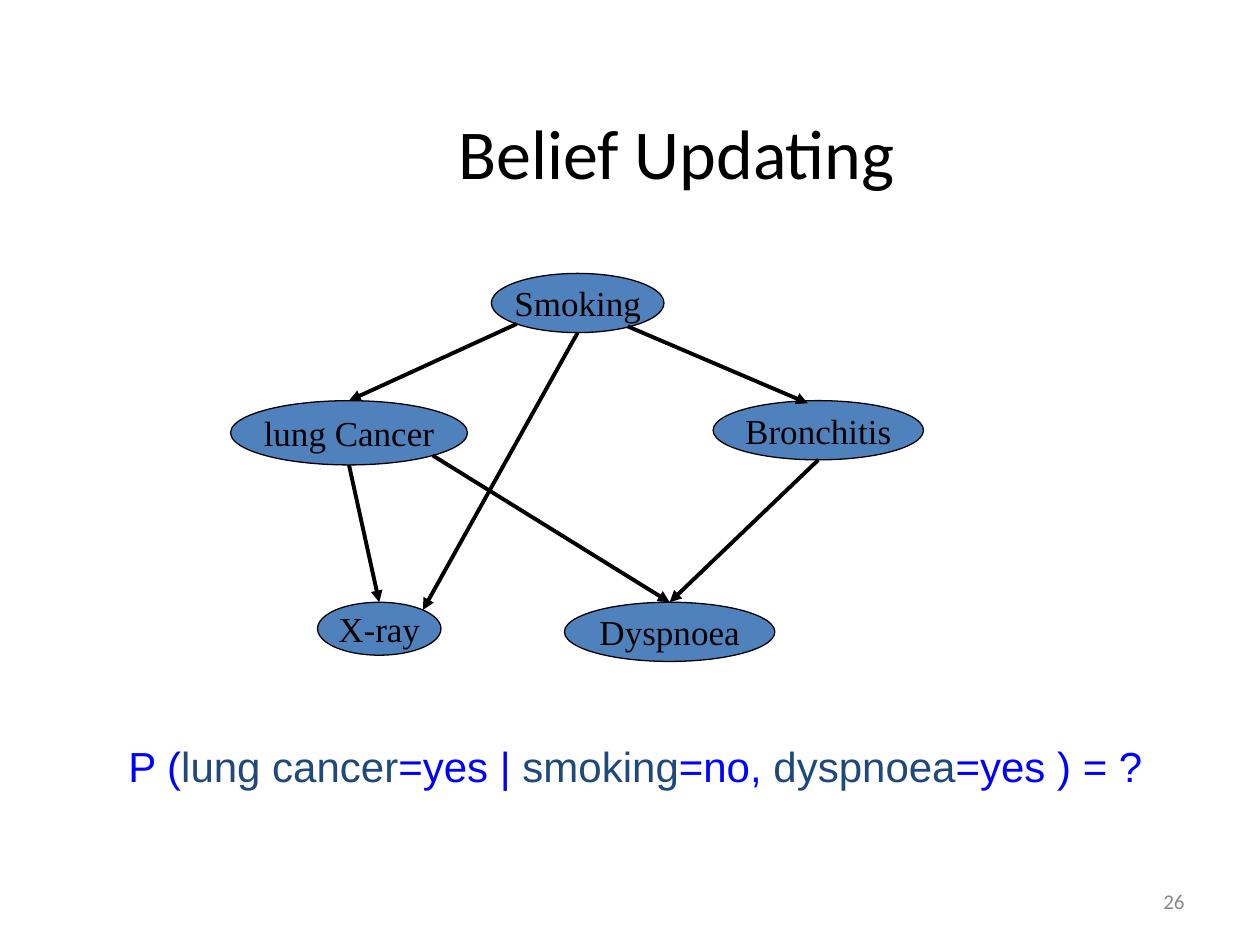
import math

import pptx
import pptx.dml.color
import pptx.enum.shapes
import pptx.enum.text
import pptx.oxml
import pptx.oxml.ns
import pptx.util

Inches = pptx.util.Inches
Pt = pptx.util.Pt
Align = pptx.enum.text.PP_ALIGN
Anchor = pptx.enum.text.MSO_ANCHOR

COLORS = {
    "black": "000000",
    "gray": "898989",
    "node": "4F81BD",
    "blue": "0000FF",
    "navy": "1F497D",
}

# Spots on an oval, as shares of its half width and half height
DIAG = math.sqrt(0.5)
TOP, BOTTOM = (0, -1), (0, 1)
LOW_LEFT, LOW_RIGHT = (-DIAG, DIAG), (DIAG, DIAG)
UP_RIGHT = (DIAG, -DIAG)

# Name: left, top, width, height within the network
NODES = {
    "lung Cancer": (0, 1.01, 1.88, 0.51),
    "Smoking": (2.07, 0, 1.37, 0.47),
    "X-ray": (0.69, 2.61, 0.98, 0.42),
    "Bronchitis": (3.83, 1.01, 1.67, 0.47),
    "Dyspnoea": (2.65, 2.61, 1.67, 0.47),
}

EDGES = [
    ("Smoking", LOW_LEFT, "lung Cancer", TOP),
    ("Smoking", (0.58, 0.79), "Bronchitis", (-0.1, -0.91)),
    ("lung Cancer", BOTTOM, "X-ray", TOP),
    ("Smoking", BOTTOM, "X-ray", UP_RIGHT),
    ("lung Cancer", LOW_RIGHT, "Dyspnoea", TOP),
    ("Bronchitis", BOTTOM, "Dyspnoea", TOP),
]


def color(name):
    return pptx.dml.color.RGBColor.from_string(COLORS[name])


def write(shape, runs, size, font, align=Align.LEFT, anchor=Anchor.MIDDLE, wrap=True):
    """Fill a shape with one paragraph of (text, colour) runs."""
    frame = shape.text_frame
    frame.word_wrap = wrap
    frame.vertical_anchor = anchor
    para = frame.paragraphs[0]
    para.alignment = align
    for text, tint in runs:
        run = para.add_run()
        run.text = text
        run.font.size = Pt(size)
        run.font.name = font
        run.font.color.rgb = color(tint)


def add_box(slide, box):
    return slide.shapes.add_textbox(*map(Inches, box))


def add_title(slide, box):
    write(add_box(slide, box), [("Belief Updating", "black")], 40, "Calibri",
          align=Align.CENTER)


def add_node(slide, name, box):
    oval = slide.shapes.add_shape(
        pptx.enum.shapes.MSO_SHAPE.OVAL, *map(Inches, box))
    oval.shadow.inherit = False
    oval.fill.solid()
    oval.fill.fore_color.rgb = color("node")
    oval.line.color.rgb = color("black")
    oval.line.width = Pt(0.75)
    write(oval, [(name, "black")], 20, "Times New Roman",
          align=Align.CENTER, wrap=False)
    return oval


def find_spot(oval, spot):
    x = oval.left + oval.width * (1 + spot[0]) / 2
    y = oval.top + oval.height * (1 + spot[1]) / 2
    return round(x), round(y)


def add_edge(slide, start, out, end, into):
    edge = slide.shapes.add_connector(
        pptx.enum.shapes.MSO_CONNECTOR.STRAIGHT,
        *find_spot(start, out), *find_spot(end, into))
    if into == TOP:
        edge.end_connect(end, 0)
    edge.line.color.rgb = color("black")
    edge.line.width = Pt(2.25)
    # Arrowhead, and no shadow
    head = pptx.oxml.parse_xml(
        '<a:tailEnd %s type="triangle"/>' % pptx.oxml.ns.nsdecls("a"))
    edge.line._get_or_add_ln().append(head)
    edge._element.spPr.append(pptx.oxml.parse_xml(
        "<a:effectLst %s/>" % pptx.oxml.ns.nsdecls("a")))


def add_network(slide, left, top):
    ovals = {
        name: add_node(slide, name, (left + x, top + y, w, h))
        for name, (x, y, w, h) in NODES.items()
    }
    for start, out, end, into in EDGES:
        add_edge(slide, ovals[start], out, ovals[end], into)


def add_query(slide, box):
    runs = [
        ("P (", "blue"), ("lung cancer", "navy"), ("=yes | ", "blue"),
        ("smoking", "navy"), ("=no, ", "blue"), ("dyspnoea", "navy"),
        ("=yes ) = ?", "blue"),
    ]
    write(add_box(slide, box), runs, 24, "Arial", anchor=Anchor.TOP, wrap=False)


def add_number(slide, box):
    write(add_box(slide, box), [("26", "gray")], 12, "Calibri", align=Align.RIGHT)


def main():
    deck = pptx.Presentation()
    deck.slide_width = Inches(10)
    deck.slide_height = Inches(7.5)
    slide = deck.slides.add_slide(deck.slide_layouts[6])
    add_number(slide, (7.17, 6.95, 2.33, 0.4))
    add_title(slide, (1.11, 0.58, 8.52, 1.25))
    add_network(slide, 1.83, 2.17)
    add_query(slide, (0.92, 5.83, 8.4, 0.5))
    deck.save("out.pptx")


if __name__ == "__main__":
    main()
